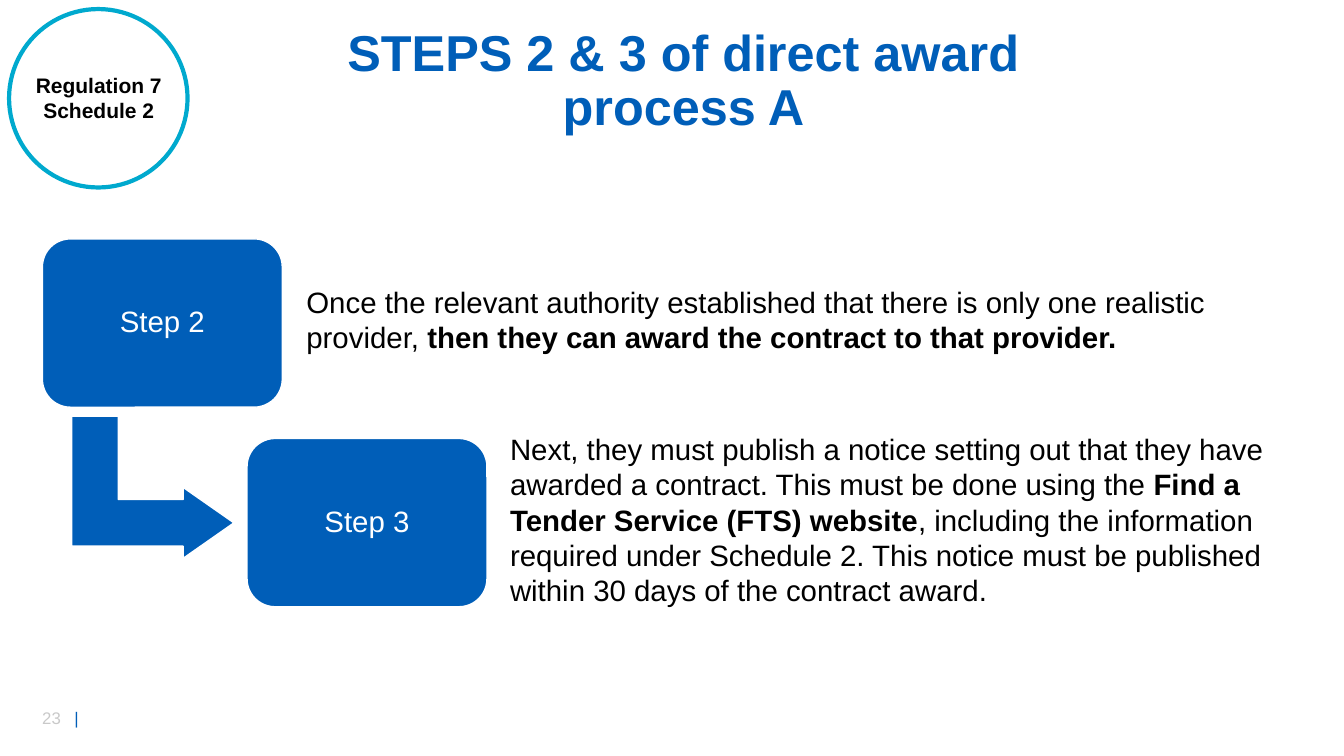
from dataclasses import dataclass

from lxml.etree import SubElement
from pptx import Presentation
from pptx.dml.color import RGBColor
from pptx.enum.shapes import MSO_SHAPE
from pptx.enum.text import MSO_ANCHOR, MSO_AUTO_SIZE, PP_ALIGN
from pptx.oxml.ns import qn
from pptx.util import Inches, Pt


@dataclass(frozen=True)
class Theme:
    font: str = "Arial"
    blue: str = "005EB8"
    aqua: str = "00A9CE"
    grey: str = "C9C9C9"
    black: str = "000000"
    white: str = "FFFFFF"
    title: int = 36
    body: int = 21
    badge: int = 15
    footer: int = 12


T = Theme()


def write(sp, *runs, size=T.body, color=T.black, bold=False, align=PP_ALIGN.LEFT,
          anchor=MSO_ANCHOR.TOP, spacing=1.0, wrap=True, tab=None):
    """Fill a shape with one paragraph; a run is text or (text, format)."""
    tf = sp.text_frame
    tf.word_wrap = wrap
    tf.auto_size = MSO_AUTO_SIZE.NONE
    tf.vertical_anchor = anchor
    p = tf.paragraphs[0]
    p.alignment = align
    p.line_spacing = spacing
    if tab:
        tabs = SubElement(p._p.get_or_add_pPr(), qn("a:tabLst"))
        SubElement(tabs, qn("a:tab"), pos=str(Inches(tab)), algn="l")
    for run in runs:
        text, fmt = (run, {}) if isinstance(run, str) else run
        r = p.add_run()
        r.text = text
        r.font.name = T.font
        r.font.size = Pt(size)
        r.font.bold = fmt.get("bold", bold)
        r.font.color.rgb = RGBColor.from_string(fmt.get("color", color))


def add_shape(shapes, kind, box, fill, line, width):
    sp = shapes.add_shape(kind, *map(Inches, box))
    sp.shadow.inherit = False
    sp.fill.solid()
    sp.fill.fore_color.rgb = RGBColor.from_string(fill)
    sp.line.color.rgb = RGBColor.from_string(line)
    sp.line.width = Pt(width)
    return sp


prs = Presentation()
prs.slide_width, prs.slide_height = Inches(13.33), Inches(7.5)
s = prs.slides.add_slide(prs.slide_layouts[5])

# Page number
sp = s.shapes.add_textbox(Inches(0.32), Inches(6.97), Inches(0.71), Inches(0.3))
write(sp, "23", ("\t|", {"color": T.blue}), size=T.footer, color=T.grey,
      wrap=False, tab=0.32)

# Title
title = s.shapes.title
title.left, title.top = Inches(2.47), Inches(0.48)
title.width, title.height = Inches(8.62), Inches(0.67)
write(title, "STEPS 2 & 3 of direct award process A", size=T.title, color=T.blue,
      bold=True, align=PP_ALIGN.CENTER, anchor=MSO_ANCHOR.MIDDLE, spacing=0.9)

# Regulation badge
badge = s.shapes.add_group_shape()
add_shape(badge.shapes, MSO_SHAPE.OVAL, (0.09, 0.09, 1.77, 1.77), T.white, T.aqua, 3)
sp = badge.shapes.add_textbox(Inches(0.11), Inches(0.67), Inches(1.74), Inches(0.61))
write(sp, "Regulation 7 Schedule 2", size=T.badge, bold=True, align=PP_ALIGN.CENTER)

# Arrow from step 2 to step 3
arrow = add_shape(s.shapes, MSO_SHAPE.BENT_UP_ARROW, (0.81, 4.03, 1.41, 1.61),
                  T.blue, T.white, 1)
arrow.rotation = 90
for i, value in enumerate((0.328, 0.25, 0.358)):
    arrow.adjustments[i] = value

# Steps: label, box corner, text frame, text
strong = {"bold": True}
steps = [
    ("Step 2", (0.42, 2.37), (2.94, 2.77, 9.45, 0.81), [
        "Once the relevant authority established that there is only one realistic provider, ",
        ("then they can award the contract to that provider.", strong)]),
    ("Step 3", (2.45, 4.35), (4.96, 4.23, 8.32, 1.87), [
        "Next, they must publish a notice setting out that they have awarded a contract. "
        "This must be done using the ",
        ("Find a Tender Service (FTS) website", strong),
        ", including the information required under Schedule 2. This notice must be "
        "published within 30 days of the contract award."]),
]
for label, corner, frame, runs in steps:
    sp = add_shape(s.shapes, MSO_SHAPE.ROUNDED_RECTANGLE, (*corner, 2.38, 1.67),
                   T.blue, T.white, 1)
    write(sp, label, color=T.white, align=PP_ALIGN.CENTER,
          anchor=MSO_ANCHOR.MIDDLE, spacing=0.9)
    sp = s.shapes.add_textbox(*map(Inches, frame))
    write(sp, *runs)

prs.save("out.pptx")
